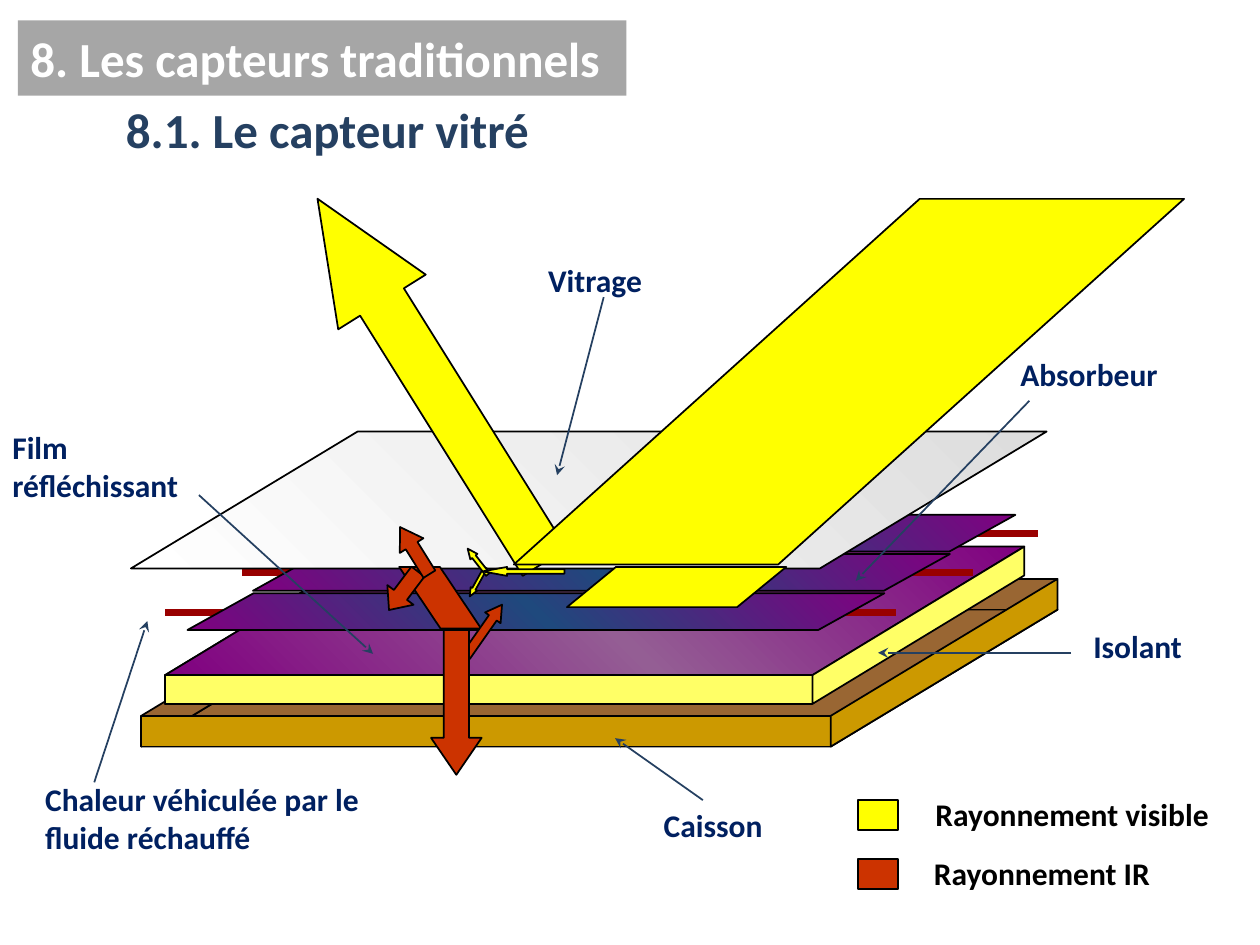
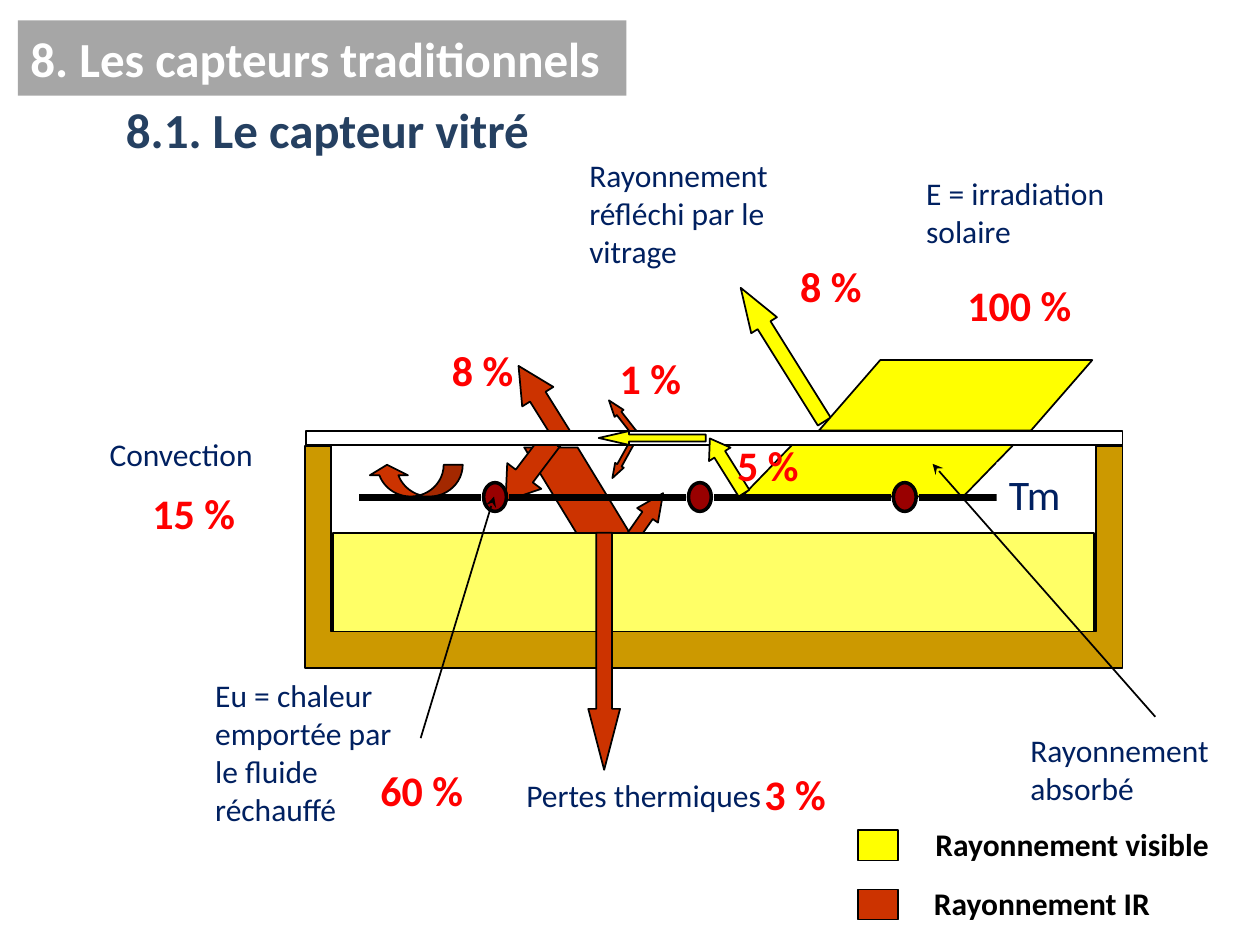
from dataclasses import dataclass

from lxml.etree import SubElement
from pptx import Presentation
from pptx.dml.color import RGBColor
from pptx.enum.shapes import MSO_CONNECTOR, MSO_SHAPE as Preset
from pptx.enum.text import MSO_ANCHOR as Anchor, MSO_AUTO_SIZE as AutoSize, PP_ALIGN as Align
from pptx.oxml.ns import qn
from pptx.util import Cm, Pt


@dataclass(frozen=True)
class Theme:
    """Colours, font and type sizes of the slides."""
    font: str = "Calibri"
    title_size: int = 28
    figure_size: int = 24
    label_size: int = 18
    band: str = "A6A6A6"
    white: str = "FFFFFF"
    black: str = "000000"
    heading: str = "254061"
    label: str = "002060"
    figure: str = "FF0000"
    visible: str = "FFFF00"
    infrared: str = "CC3300"
    tube: str = "990000"
    wood: str = "CC9900"
    wood_inside: str = "996633"
    insulation: str = "FFFF66"
    film: tuple = ("800080", "945E94", "800080")
    absorber: tuple = ("800080", "1F497D", "800080")
    glass: tuple = ("FFFFFF", "DDDDDD")


THEME = Theme()


def color(value):
    """Turn a hex string into a colour."""
    return RGBColor.from_string(value)


def paint(shape, fill, line_width=1):
    """Give a shape a plain or graded fill and a black outline."""
    shape.shadow.inherit = False
    if isinstance(fill, tuple):
        shape.fill.gradient()
        shape.fill.gradient_angle = 45
        stops = shape.element.spPr.find(qn("a:gradFill")).find(qn("a:gsLst"))
        stops.clear()
        for index, value in enumerate(fill):
            position = 100000 * index // (len(fill) - 1)
            stop = SubElement(stops, qn("a:gs"), pos=str(position))
            SubElement(stop, qn("a:srgbClr"), val=value)
    else:
        shape.fill.solid()
        shape.fill.fore_color.rgb = color(fill)
    shape.line.color.rgb = color(THEME.black)
    shape.line.width = Pt(line_width)


def add_preset(slide, kind, box, fill, adjustments=(), rotation=0, flip=False, line_width=1):
    """Add an outlined preset shape."""
    shape = slide.shapes.add_shape(kind, *map(Cm, box))
    for index, value in enumerate(adjustments):
        shape.adjustments[index] = value
    shape.rotation = rotation
    if flip:
        shape.element.spPr.find(qn("a:xfrm")).set("flipH", "1")
    paint(shape, fill, line_width)
    return shape


def add_arrow(slide, kind, box, fill, head, rotation=0):
    """Add a block arrow whose shaft is half as wide as its head."""
    add_preset(slide, kind, box, fill, (0.5, head), rotation)


def add_beam(slide, box, fill, slant, flip=False):
    """Add a slanted beam or strip."""
    add_preset(slide, Preset.PARALLELOGRAM, box, fill, (slant,), flip=flip)


def add_polygon(slide, points, fill):
    """Add a closed outline through the given points."""
    corners = [(Cm(x), Cm(y)) for x, y in points]
    builder = slide.shapes.build_freeform(*corners[0], scale=1.0)
    builder.add_line_segments(corners[1:], close=True)
    paint(builder.convert_to_shape(), fill)


def add_face(slide, corner, side, depth, fill):
    """Add a four-sided face spanned by two edges from a corner."""
    (x, y), (side_x, side_y), (depth_x, depth_y) = corner, side, depth
    add_polygon(slide, [
        (x, y),
        (x + depth_x, y + depth_y),
        (x + side_x + depth_x, y + side_y + depth_y),
        (x + side_x, y + side_y),
    ], fill)


def add_tray(slide, box, depth, outside, inside, cover=None):
    """Add a box in perspective, open or closed by a cover."""
    x, y, width, height = box
    across, down = (width, 0), (0, height)
    if cover is None:
        add_face(slide, (x, y + height), across, depth, inside)
    add_face(slide, (x, y), down, depth, inside)
    add_preset(slide, Preset.RECTANGLE, box, outside)
    add_preset(slide, Preset.RECTANGLE, (x + depth[0], y + depth[1], width, height), inside)
    if cover is not None:
        add_face(slide, (x, y), across, depth, cover)
    add_face(slide, (x + width, y), down, depth, outside)


def add_line(slide, start, end, line_color, width=1, pointed=False):
    """Add a straight line, with an arrowhead at its end if pointed."""
    connector = slide.shapes.add_connector(
        MSO_CONNECTOR.STRAIGHT, *map(Cm, start), *map(Cm, end))
    connector.line.color.rgb = color(line_color)
    connector.line.width = Pt(width)
    properties = connector.element.spPr
    if pointed:
        SubElement(properties.find(qn("a:ln")), qn("a:tailEnd"), type="stealth")
    SubElement(properties, qn("a:effectLst"))


def set_text(shape, text, size, text_color, bold, align=Align.LEFT):
    """Write one paragraph in a shape."""
    shape.text_frame.text = text
    paragraph = shape.text_frame.paragraphs[0]
    paragraph.alignment = align
    paragraph.font.name = THEME.font
    paragraph.font.size = Pt(size)
    paragraph.font.bold = bold
    paragraph.font.color.rgb = color(text_color)


def add_label(slide, text, box, size=THEME.label_size, text_color=THEME.label,
              bold=False, wrap=True, align=Align.LEFT):
    """Add a text box and return it."""
    shape = slide.shapes.add_textbox(*map(Cm, box))
    shape.text_frame.word_wrap = wrap
    set_text(shape, text, size, text_color, bold, align)
    return shape


def add_figure(slide, text, x, y):
    """Add a percentage in large red type."""
    width = 0.88 + 0.435 * (len(text) - 1)
    add_label(slide, text, (x, y, width, 1.27), THEME.figure_size, THEME.figure,
              bold=True, wrap=False)


def add_legend(slide, top):
    """Add the key to the two kinds of radiation."""
    entries = [
        ("Rayonnement visible", THEME.visible, 7.01),
        ("Rayonnement IR", THEME.infrared, 5.79),
    ]
    for row, (text, fill, width) in enumerate(entries):
        y = top + 1.19 * row
        add_preset(slide, Preset.RECTANGLE, (17.3, y, 0.81, 0.61), fill)
        add_label(slide, text, (18.11, y - 0.23, width, 1.02),
                  text_color=THEME.black, bold=True, align=Align.CENTER)


def add_titled_slide(presentation):
    """Add a slide with the chapter band and the section heading."""
    slide = presentation.slides.add_slide(presentation.slide_layouts[5])
    title = slide.shapes.title
    title.left, title.top, title.width, title.height = map(Cm, (0.36, 0.41, 12.27, 1.52))
    title.fill.solid()
    title.fill.fore_color.rgb = color(THEME.band)
    title.text_frame.auto_size = AutoSize.NONE
    title.text_frame.vertical_anchor = Anchor.MIDDLE
    set_text(title, "8. Les capteurs traditionnels", THEME.title_size, THEME.white, True)
    add_label(slide, "8.1. Le capteur vitré", (2.29, 1.88, 8.74, 1.45),
              THEME.title_size, THEME.heading, bold=True, wrap=False)
    return slide


def add_absorber(slide):
    """Add the three absorber strips, each over its fluid tube."""
    for row, tube_x in enumerate((3.33, 4.88, 6.2)):
        tube_y = 12.34 - 0.79 * row
        add_line(slide, (tube_x, tube_y), (tube_x + 14.73, tube_y), THEME.tube, 4)
        add_beam(slide, (3.78 + 1.32 * row, tube_y - 0.38, 14.05, 0.74), THEME.absorber, 1.8)


def build_perspective_slide(presentation):
    """Build the exploded view of the collector."""
    slide = add_titled_slide(presentation)
    visible, infrared = THEME.visible, THEME.infrared
    add_tray(slide, (2.85, 14.43, 13.9, 0.62), (4.57, -2.76), THEME.wood, THEME.wood_inside)
    add_tray(slide, (3.33, 13.61, 13.05, 0.58), (4.27, -2.59),
             THEME.insulation, THEME.wood_inside, THEME.film)
    add_absorber(slide)
    add_face(slide, (2.64, 11.46), (13.89, 0), (4.57, -2.76), THEME.glass)

    add_beam(slide, (11.43, 11.43, 4.42, 0.81), visible, 1.22)
    add_arrow(slide, Preset.LEFT_ARROW, (9.3, 11.66, 0.66, 0.15), visible, 1.17, 299)
    add_arrow(slide, Preset.LEFT_ARROW, (9.3, 11.23, 0.66, 0.18), visible, 1.14, 52)
    add_beam(slide, (8.05, 11.43, 1.65, 1.24), infrared, 0.67, flip=True)
    add_arrow(slide, Preset.LEFT_ARROW, (7.65, 11.58, 0.97, 0.66), infrared, 0.58, 307)
    add_arrow(slide, Preset.LEFT_ARROW, (7.8, 10.82, 1.12, 0.56), infrared, 0.79, 58)
    add_arrow(slide, Preset.UP_ARROW, (7.65, 3.35, 2.08, 8.64), visible, 1.18, 328)
    add_arrow(slide, Preset.LEFT_ARROW, (9.12, 12.52, 1.27, 0.38), infrared, 0.85, 125)
    add_beam(slide, (10.36, 4.01, 13.51, 7.37), visible, 1.11)
    add_arrow(slide, Preset.LEFT_ARROW, (9.73, 11.43, 1.65, 0.18), visible, 2.74)
    add_arrow(slide, Preset.DOWN_ARROW, (8.69, 12.7, 1.02, 2.92), infrared, 0.73)

    parts = [
        ("Vitrage", (10.8, 5.13, 2.74, 1.02), (12.17, 5.99), (11.23, 9.58)),
        ("Absorbeur", (20.32, 7.04, 3.61, 1.02), (20.75, 8.08), (17.25, 11.71)),
        ("Isolant", (21.79, 12.52, 2.54, 1.02), (21.59, 13.16), (17.7, 13.16)),
        ("Caisson", (13.13, 16.13, 2.97, 1.02), (14.17, 16.13), (12.4, 14.88)),
        ("Film réfléchissant", (0, 8.51, 4.24, 1.78), (4.01, 9.98), (7.52, 13.18)),
        ("Chaleur véhiculée par le fluide réchauffé", (0.66, 15.6, 8.36, 1.8),
         (1.9, 15.77), (2.97, 12.52)),
    ]
    for text, box, start, end in parts:
        add_label(slide, text, box, bold=True)
        add_line(slide, start, end, THEME.heading, pointed=True)
    add_legend(slide, 16.13)


def add_collector_section(slide):
    """Add the casing, insulation, glazing, tubes and absorber in section."""
    add_preset(slide, Preset.RECTANGLE, (6.71, 10.74, 15.34, 2.01), THEME.insulation)
    add_preset(slide, Preset.RECTANGLE, (6.17, 8.69, 16.46, 0.28), THEME.white)
    add_polygon(slide, [
        (6.15, 8.99), (6.15, 13.46), (22.63, 13.46), (22.63, 8.99),
        (22.1, 8.99), (22.1, 12.73), (6.68, 12.73), (6.68, 8.99),
    ], THEME.wood)
    tube_width, gap, plate_y = 0.46, 0.05, 10.03
    tubes = [9.75 + 4.13 * index for index in range(3)]
    for x in tubes:
        add_preset(slide, Preset.OVAL, (x, 9.73, tube_width, 0.58), THEME.tube, line_width=2)
    starts = [7.24] + [x + tube_width + gap for x in tubes]
    ends = [x - gap for x in tubes] + [21.26]
    for start, end in zip(starts, ends):
        add_line(slide, (start, plate_y), (end, plate_y), THEME.black, 4)


def build_balance_slide(presentation):
    """Build the energy balance on a section of the collector."""
    slide = add_titled_slide(presentation)
    visible, infrared = THEME.visible, THEME.infrared
    add_beam(slide, (14.96, 8.69, 5.74, 1.32), visible, 0.97)
    add_arrow(slide, Preset.LEFT_ARROW, (12.07, 9.07, 1.07, 0.2), infrared, 1.47, 299)
    add_arrow(slide, Preset.LEFT_ARROW, (12.07, 8.38, 1.07, 0.23), infrared, 1.44, 52)
    add_beam(slide, (10.57, 9.02, 2.16, 1.78), infrared, 0.61, flip=True)
    add_arrow(slide, Preset.LEFT_ARROW, (9.88, 9.04, 1.57, 0.86), infrared, 0.73, 307)
    add_arrow(slide, Preset.LEFT_ARROW, (10.03, 7.77, 1.8, 0.74), infrared, 0.99, 58)
    add_arrow(slide, Preset.UP_ARROW, (15.47, 5.56, 0.61, 3.18), visible, 1.46, 328)
    add_arrow(slide, Preset.LEFT_ARROW, (11.73, 10.54, 2.08, 0.51), infrared, 1.07, 125)
    add_collector_section(slide)
    add_arrow(slide, Preset.LEFT_ARROW, (12.07, 8.69, 2.16, 0.28), visible, 2.19)
    add_arrow(slide, Preset.DOWN_ARROW, (11.86, 10.74, 0.64, 4.78), infrared, 1.92)
    add_arrow(slide, Preset.UP_ARROW, (14.4, 8.74, 0.51, 1.3), visible, 0.74, 328)
    add_preset(slide, Preset.CURVED_UP_ARROW, (7.42, 9.37, 1.91, 0.64), infrared,
               (0.6, 1.2, 0.33), flip=True)
    add_beam(slide, (16.51, 7.26, 5.51, 1.42), visible, 0.87)
    add_line(slide, (23.29, 14.45), (18.8, 9.35), THEME.black, pointed=True)
    add_line(slide, (8.48, 14.88), (9.96, 10.01), THEME.black, pointed=True)

    for text, box in [
        ("E = irradiation solaire", (18.42, 3.38, 5.69, 1.78)),
        ("Rayonnement réfléchi par le vitrage", (11.63, 3.02, 4.65, 2.54)),
        ("Pertes thermiques", (10.36, 15.52, 5.92, 1.02)),
        ("Rayonnement absorbé", (20.52, 14.61, 4.88, 1.78)),
        ("Eu = chaleur emportée par le fluide réchauffé", (4.09, 13.51, 4.65, 3.3)),
        ("Convection", (1.96, 8.64, 3.89, 1.02)),
    ]:
        add_label(slide, text, box)
    for text, x, y in [
        ("1 %", 12.24, 6.99), ("5 %", 14.61, 8.74), ("8 %", 15.88, 5.13),
        ("100 %", 19.25, 5.51), ("3 %", 15.16, 15.37), ("60 %", 7.42, 15.29),
        ("8 %", 8.86, 6.83), ("15 %", 2.82, 9.7),
    ]:
        add_figure(slide, text, x, y)
    temperature = add_label(slide, "Tm", (20.09, 9.32, 1.57, 1.27),
                            THEME.figure_size, wrap=False)
    temperature.fill.solid()
    temperature.fill.fore_color.rgb = color(THEME.white)
    add_legend(slide, 16.74)


def main():
    """Build and save the presentation."""
    presentation = Presentation()
    presentation.slide_width, presentation.slide_height = Cm(25.4), Cm(19.05)
    build_perspective_slide(presentation)
    build_balance_slide(presentation)
    presentation.save("out.pptx")


if __name__ == "__main__":
    main()
